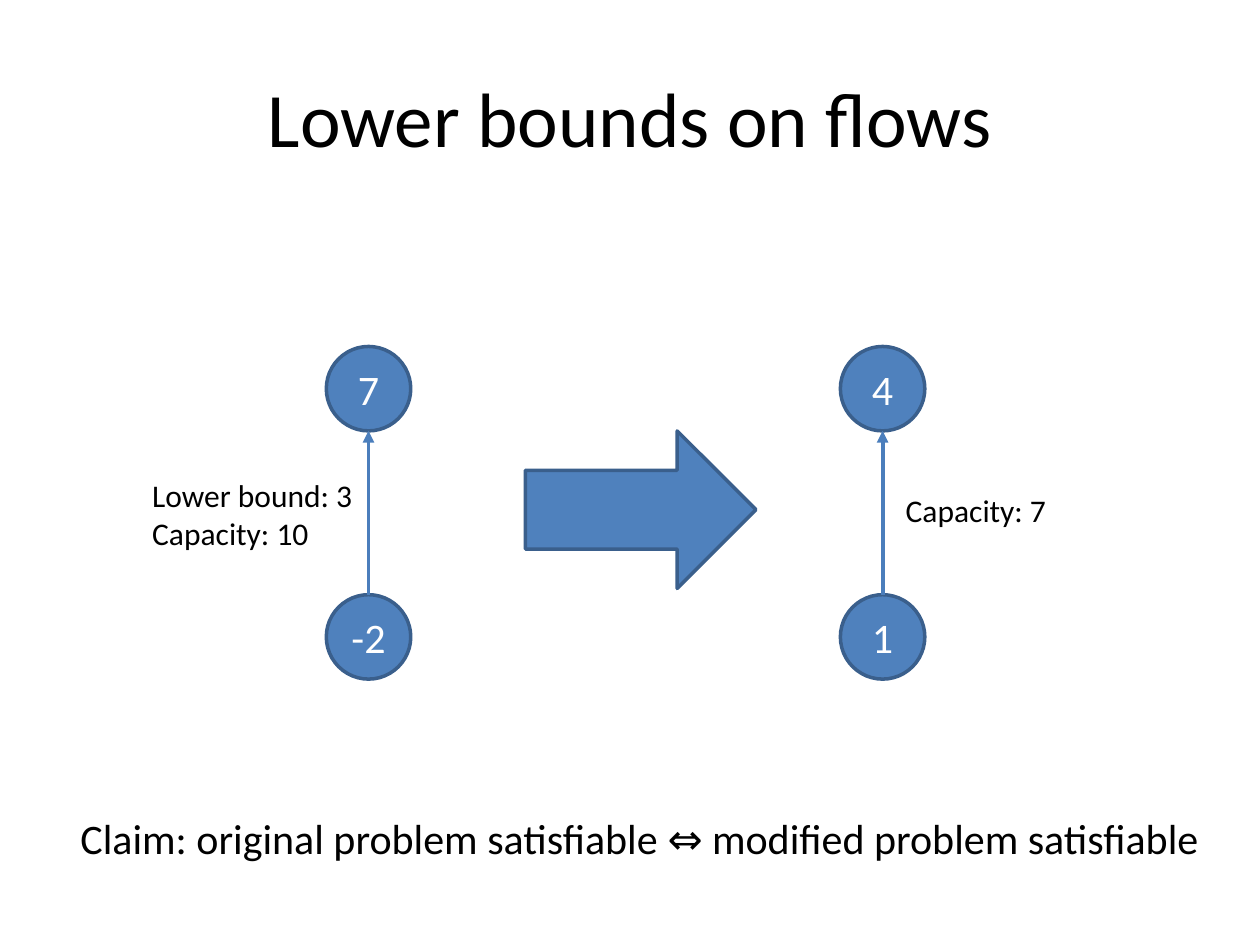
import pptx
import pptx.util
import pptx.dml.color
import pptx.enum.shapes
import pptx.enum.text
import pptx.oxml.ns
import lxml.etree

Inches = pptx.util.Inches
Pt = pptx.util.Pt
SHAPES = pptx.enum.shapes.MSO_SHAPE
ANCHOR = pptx.enum.text.MSO_ANCHOR
ALIGN = pptx.enum.text.PP_ALIGN

COLORS = {
    "text": "000000",
    "node_text": "FFFFFF",
    "fill": "4F81BD",
    "outline": "3A5F8C",
    "edge": "4B7EBC",
}
NODE_SIZE = 0.67
TOP_NODE_Y = 2.75
BOTTOM_NODE_Y = 4.72

deck = pptx.Presentation()
deck.slide_width = Inches(10)
deck.slide_height = Inches(7.5)
slide = deck.slides.add_slide(deck.slide_layouts[6])


def write(part, lines, size, color="text", align=ALIGN.LEFT, anchor=ANCHOR.TOP, wrap=False):
    frame = part.text_frame
    frame.word_wrap = wrap
    frame.vertical_anchor = anchor
    paragraph = frame.paragraphs[0]
    paragraph.alignment = align
    for index, line in enumerate(lines):
        if index:
            paragraph.add_line_break()
        run = paragraph.add_run()
        run.text = line
        run.font.name = "Calibri"
        run.font.size = Pt(size)
        run.font.color.rgb = pptx.dml.color.RGBColor.from_string(COLORS[color])


def add_blue_shape(kind, left, top, width, height):
    shape = slide.shapes.add_shape(kind, Inches(left), Inches(top), Inches(width), Inches(height))
    shape.shadow.inherit = False
    shape.fill.solid()
    shape.fill.fore_color.rgb = pptx.dml.color.RGBColor.from_string(COLORS["fill"])
    shape.line.color.rgb = pptx.dml.color.RGBColor.from_string(COLORS["outline"])
    shape.line.width = Pt(2)
    return shape


title = slide.shapes.add_textbox(Inches(0.5), Inches(0.3), Inches(9), Inches(1.25))
write(title, ["Lower bounds on flows"], 44, align=ALIGN.CENTER, anchor=ANCHOR.MIDDLE, wrap=True)

networks = [(2.59, "7", "-2"), (6.67, "4", "1")]
for left, top_demand, bottom_demand in networks:
    for demand, top in [(bottom_demand, BOTTOM_NODE_Y), (top_demand, TOP_NODE_Y)]:
        node = add_blue_shape(SHAPES.OVAL, left, top, NODE_SIZE, NODE_SIZE)
        write(node, [demand], 24, "node_text", ALIGN.CENTER, ANCHOR.MIDDLE)

    center = Inches(left + NODE_SIZE / 2)
    edge = slide.shapes.add_connector(
        pptx.enum.shapes.MSO_CONNECTOR.STRAIGHT,
        center, Inches(BOTTOM_NODE_Y), center, Inches(TOP_NODE_Y + NODE_SIZE),
    )
    edge.line.color.rgb = pptx.dml.color.RGBColor.from_string(COLORS["edge"])
    edge.line.width = Pt(2.25)
    arrowhead = lxml.etree.SubElement(edge.line._get_or_add_ln(), pptx.oxml.ns.qn("a:tailEnd"))
    arrowhead.set("type", "triangle")
    lxml.etree.SubElement(edge._element.spPr, pptx.oxml.ns.qn("a:effectLst"))

add_blue_shape(SHAPES.RIGHT_ARROW, 4.17, 3.42, 1.83, 1.25)

captions = [
    (1.11, 3.73, 1.81, 0.71, 18, ["Lower bound: 3", "Capacity: 10"]),
    (7.09, 3.85, 1.33, 0.4, 18, ["Capacity: 7"]),
    (0.54, 6.4, 9.24, 0.5, 24, ["Claim: original problem satisfiable ⇔ modified problem satisfiable"]),
]
for left, top, width, height, size, lines in captions:
    caption = slide.shapes.add_textbox(Inches(left), Inches(top), Inches(width), Inches(height))
    write(caption, lines, size)
    caption.text_frame.auto_size = pptx.enum.text.MSO_AUTO_SIZE.SHAPE_TO_FIT_TEXT

deck.save("out.pptx")
